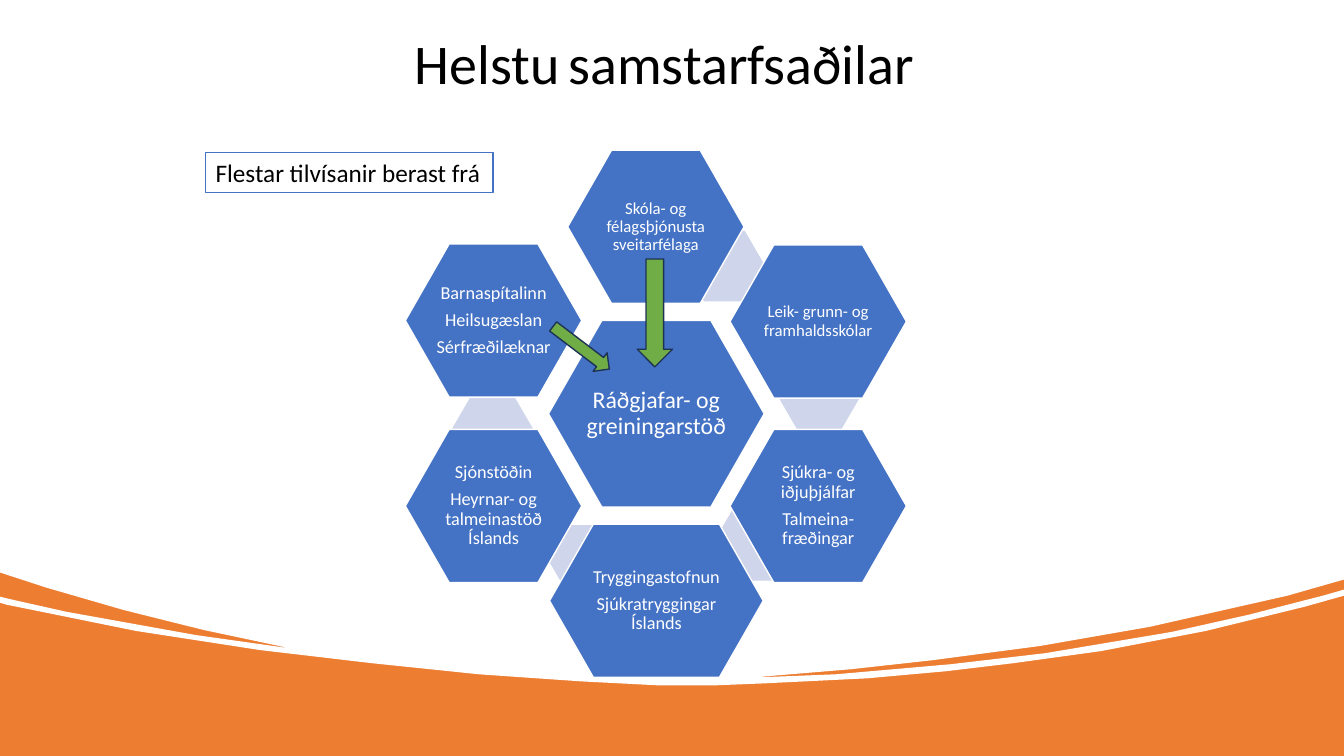
from dataclasses import dataclass

from pptx import Presentation
from pptx.dml.color import RGBColor
from pptx.enum.shapes import MSO_SHAPE
from pptx.enum.text import MSO_ANCHOR, MSO_AUTO_SIZE, PP_ALIGN
from pptx.shapes.autoshape import Shape
from pptx.slide import Slide
from pptx.util import Pt

PX = 9144  # 100 px to the inch
WIDE, HIGH = 1333, 750
FONT = "Calibri"
HUES = {
    "wave": "ED7D31",
    "paper": "FFFFFF",
    "hex": "4472C4",
    "link": "CFD5EA",
    "arrow": "70AD47",
    "edge": "1E3256",
    "ink": "000000",
}


@dataclass
class Box:
    left: int
    top: int
    width: int
    height: int

    def emu(self) -> list[int]:
        return [n * PX for n in (self.left, self.top, self.width, self.height)]


@dataclass
class Hex:
    box: Box
    size: int
    lines: list[str]


@dataclass
class Arrow:
    box: Box
    turn: float = 0


# White area above the wave, with its two thin stripes
SHEET = [
    (0, 0), (1333, 0), (1333, 575), (1319, 579), (1277, 591), (1140, 622),
    (1031, 641), (925, 655), (844, 664), (760, 671), (743, 673),
    # right stripe
    (753, 672), (829, 669), (943, 659), (1037, 648), (1162, 627),
    (1238, 610), (1312, 591), (1333, 585), (1333, 591), (1294, 602),
    (1196, 626), (1092, 646), (1005, 658), (938, 666), (860, 673),
    # bottom of the wave
    (758, 678), (708, 680), (654, 680), (576, 676), (475, 669),
    (369, 658), (258, 645), (135, 626), (7, 600), (0, 598),
    # left stripe
    (0, 592), (8, 594), (66, 607), (194, 630), (286, 643), (282, 642),
    (202, 625), (122, 605), (46, 583), (0, 568),
]

LINKS = [(678, 229), (772, 359), (706, 506), (544, 521), (448, 391)]
HEXES = [
    Hex(Box(544, 318, 214, 185), 17, ["Ráðgjafar- og greiningarstöð"]),
    Hex(Box(563, 149, 175, 152), 12, ["Skóla- og félagsþjónusta sveitarfélaga"]),
    Hex(Box(724, 243, 175, 152), 12, ["Leik- grunn- og framhaldsskólar"]),
    Hex(Box(724, 426, 175, 152), 13, ["Sjúkra- og iðjuþjálfar", "Talmeina-fræðingar"]),
    Hex(Box(545, 520, 212, 152), 13, ["Tryggingastofnun", "Sjúkratryggingar Íslands"]),
    Hex(Box(402, 426, 175, 152), 13, ["Sjónstöðin", "Heyrnar- og talmeinastöð Íslands"]),
    Hex(Box(402, 242, 175, 152), 13, ["Barnaspítalinn", "Heilsugæslan", "Sérfræðilæknar"]),
]
ARROWS = [Arrow(Box(632, 257, 35, 107)), Arrow(Box(565, 310, 23, 70), 307.2)]


def tint(name: str) -> RGBColor:
    return RGBColor.from_string(HUES[name])


def paint(shape: Shape, fill: str, edge: str = "") -> None:
    shape.shadow.inherit = False
    shape.fill.solid()
    shape.fill.fore_color.rgb = tint(fill)
    if edge:
        shape.line.color.rgb = tint(edge)
        shape.line.width = Pt(1)
    else:
        shape.line.fill.background()


def style(run, size: int, hue: str) -> None:
    run.font.name = FONT
    run.font.size = Pt(size)
    run.font.color.rgb = tint(hue)


def draw_wave(slide: Slide) -> None:
    base = slide.shapes.add_shape(MSO_SHAPE.RECTANGLE, *Box(0, 0, WIDE, HIGH).emu())
    paint(base, "wave")
    pen = slide.shapes.build_freeform(*SHEET[0], scale=PX)
    pen.add_line_segments(SHEET[1:], close=True)
    paint(pen.convert_to_shape(), "paper")


def draw_link(slide: Slide, left: int, top: int) -> None:
    link = slide.shapes.add_shape(MSO_SHAPE.HEXAGON, *Box(left, top, 81, 70).emu())
    link.adjustments[0] = 0.29
    paint(link, "link")


def draw_hex(slide: Slide, item: Hex) -> None:
    tile = slide.shapes.add_shape(MSO_SHAPE.HEXAGON, *item.box.emu())
    tile.adjustments[0] = 0.286
    paint(tile, "hex", "paper")
    frame = tile.text_frame
    frame.word_wrap = True
    frame.vertical_anchor = MSO_ANCHOR.MIDDLE
    # The longest words need the full width of the hexagon
    frame.margin_left = frame.margin_right = 0
    frame.margin_top = frame.margin_bottom = 2 * PX
    frame.text = "\n".join(item.lines)
    for para in frame.paragraphs:
        para.alignment = PP_ALIGN.CENTER
        para.line_spacing = 0.9
        para.space_after = Pt(round(item.size * 0.38))
        style(para.runs[0], item.size, "paper")


def draw_title(slide: Slide) -> None:
    title = slide.shapes.title
    title.left, title.top, title.width, title.height = Box(399, 23, 520, 77).emu()
    # Lift the title above the wave
    title.element.getparent().append(title.element)
    frame = title.text_frame
    frame.word_wrap = False
    frame.auto_size = MSO_AUTO_SIZE.SHAPE_TO_FIT_TEXT
    frame.vertical_anchor = MSO_ANCHOR.TOP
    para = frame.paragraphs[0]
    para.alignment = PP_ALIGN.CENTER
    for text, size in [("Helstu", 40), (" ", 28), ("samstarfsaðilar", 40)]:
        run = para.add_run()
        run.text = text
        style(run, size, "ink")


def draw_arrow(slide: Slide, item: Arrow) -> None:
    arrow = slide.shapes.add_shape(MSO_SHAPE.DOWN_ARROW, *item.box.emu())
    arrow.rotation = item.turn
    paint(arrow, "arrow", "edge")


def draw_label(slide: Slide) -> None:
    label = slide.shapes.add_textbox(*Box(204, 151, 285, 40).emu())
    label.line.color.rgb = tint("hex")
    label.line.width = Pt(0.75)
    frame = label.text_frame
    frame.word_wrap = False
    frame.auto_size = MSO_AUTO_SIZE.SHAPE_TO_FIT_TEXT
    frame.text = "Flestar tilvísanir berast frá"
    style(frame.paragraphs[0].runs[0], 18, "ink")


def main() -> None:
    deck = Presentation()
    deck.slide_width, deck.slide_height = WIDE * PX, HIGH * PX
    slide = deck.slides.add_slide(deck.slide_layouts[5])

    # Backdrop
    draw_wave(slide)

    # Ring of partners
    for left, top in LINKS:
        draw_link(slide, left, top)
    for item in HEXES:
        draw_hex(slide, item)

    # Title, arrows and label
    draw_title(slide)
    for arrow in ARROWS:
        draw_arrow(slide, arrow)
    draw_label(slide)

    deck.save("out.pptx")


if __name__ == "__main__":
    main()
